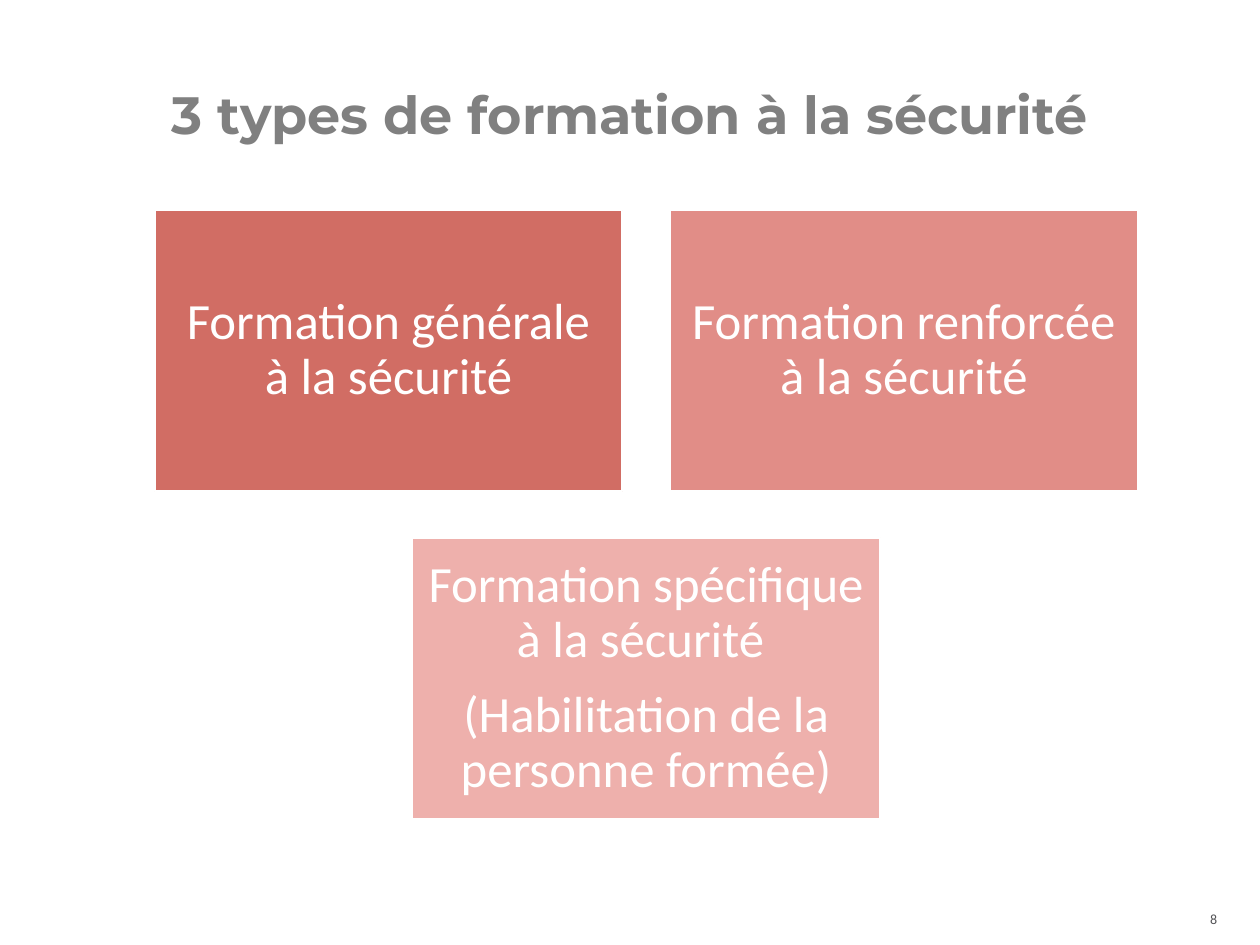
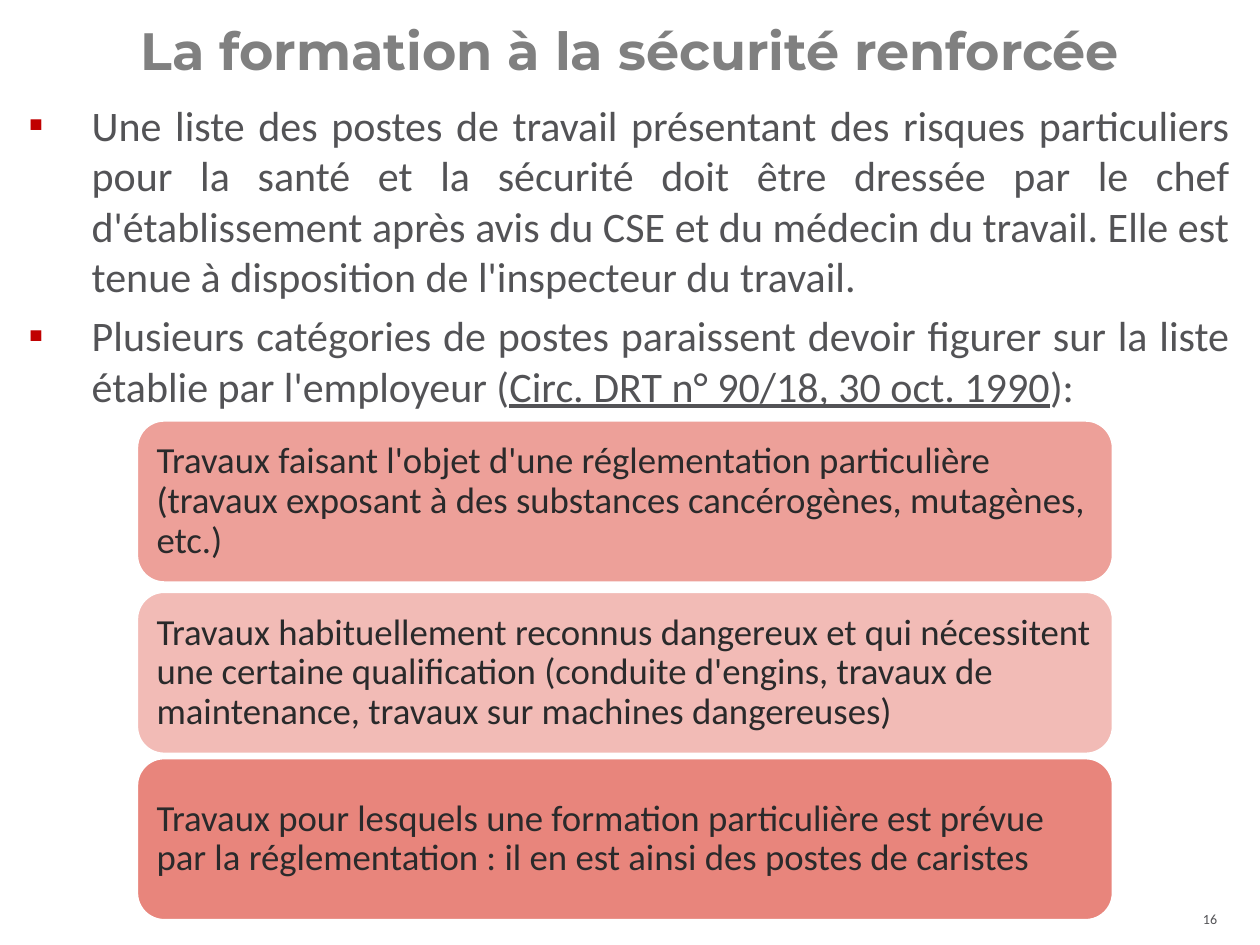
from lxml import etree
from pptx import Presentation
from pptx.dml.color import RGBColor
from pptx.enum import shapes, text
from pptx.oxml.ns import qn
from pptx.util import Inches, Pt

HUES = {
    "title": "808080", "body": "535356", "dark": "2A2A2B", "white": "FFFFFF",
    "bullet": "C00000", "strong": "D16D64", "mid": "E18D87", "pale": "EEB0AC",
    "coral": "E6786E",
}
ALIGN = text.PP_ALIGN


def rgb(name):
    return RGBColor.from_string(HUES[name])


def style(para, size, hue, align, face="Calibri", bold=False):
    para.alignment = align
    font = para.font
    font.name, font.size, font.bold = face, Pt(size), bold
    font.color.rgb = rgb(hue)


def inset(frame, size):
    frame.margin_left = frame.margin_right = Inches(size)
    frame.margin_top = frame.margin_bottom = Inches(size)


def label(slide, box, words, *look, **more):
    """One-line text box."""
    frame = slide.shapes.add_textbox(*map(Inches, box)).text_frame
    frame.word_wrap = True
    frame.text = words
    style(frame.paragraphs[0], *look, **more)
    return frame


def base(deck, title, top, number):
    """Blank slide with the shared title and page number."""
    slide = deck.slides.add_slide(deck.slide_layouts[6])
    label(slide, (0, top, 10, 0.61), title, 30, "title", ALIGN.CENTER,
          face="Montserrat", bold=True)
    foot = label(slide, (9.07, 7.19, 0.59, 0.2), number, 8, "body", ALIGN.RIGHT)
    foot.vertical_anchor = text.MSO_ANCHOR.MIDDLE
    inset(foot, 0)
    return slide


def card(slide, kind, box, lines, fill, size, hue, align, pad):
    """Filled shape with centred lines of text."""
    shape = slide.shapes.add_shape(kind, *map(Inches, box))
    shape.shadow.inherit = False
    shape.fill.solid()
    shape.fill.fore_color.rgb = rgb(fill)
    shape.line.color.rgb = rgb("white")
    shape.line.width = Pt(1)
    frame = shape.text_frame
    frame.word_wrap = True
    frame.vertical_anchor = text.MSO_ANCHOR.MIDDLE
    inset(frame, pad)
    frame.text = "\n".join(lines)
    for para in frame.paragraphs:
        style(para, size, hue, align)
        para.line_spacing = 0.9
    for para in frame.paragraphs[:-1]:
        para.space_after = Pt(11.5)
    return shape


def fade(shape, share):
    """Set the opacity of a solid fill, in percent."""
    tint = shape.fill._xPr.find(qn("a:solidFill"))[0]
    etree.SubElement(tint, qn("a:alpha"), val=str(share * 1000))


def types(slide, box):
    """Two cards side by side and a third centred below."""
    left, top, width, high = box
    wide, tall = 3.71, 2.23
    right, low = left + width - wide, top + high - tall
    cards = [
        (left, top, "strong", ["Formation générale à la sécurité"]),
        (right, top, "mid", ["Formation renforcée à la sécurité"]),
        ((left + right) / 2, low, "pale",
         ["Formation spécifique à la sécurité ",
          "(Habilitation de la personne formée)"]),
    ]
    for x, y, fill, lines in cards:
        card(slide, shapes.MSO_SHAPE.RECTANGLE, (x, y, wide, tall), lines,
             fill, 29, "white", ALIGN.CENTER, 0.12)


def mark(para):
    """Red square bullet with a hanging indent."""
    props = para._p.get_or_add_pPr()
    props.set("marL", str(Inches(0.5)))
    props.set("indent", str(-Inches(0.5)))
    tone = etree.SubElement(props, qn("a:buClr"))
    etree.SubElement(tone, qn("a:srgbClr"), val=HUES["bullet"])
    etree.SubElement(props, qn("a:buFont"), typeface="Calibri")
    etree.SubElement(props, qn("a:buChar"), char="▪")


def points(slide, box, items):
    """Justified bullets; each item is a list of (words, underlined)."""
    frame = slide.shapes.add_textbox(*map(Inches, box)).text_frame
    frame.word_wrap = True
    for i, item in enumerate(items):
        para = frame.add_paragraph() if i else frame.paragraphs[0]
        para.space_before = Pt(5 if i else 0)
        mark(para)
        style(para, 24, "body", ALIGN.JUSTIFY)
        for words, under in item:
            run = para.add_run()
            run.text = words
            if under:
                run.font.underline = True


def works(slide, box):
    """Stack of rounded cards in three strengths of one colour."""
    left, top, width, high = box
    tall = 1.28
    stack = [
        (0, 70, "Travaux faisant l'objet d'une réglementation particulière "
                "(travaux exposant à des substances cancérogènes, mutagènes, etc.)"),
        (1.36, 50, "Travaux habituellement reconnus dangereux et qui nécessitent "
                   "une certaine qualification (conduite d'engins, travaux de "
                   "maintenance, travaux sur machines dangereuses)"),
        (high - tall, 90, "Travaux pour lesquels une formation particulière est prévue "
                          "par la réglementation : il en est ainsi des postes de caristes"),
    ]
    for drop, share, words in stack:
        shape = card(slide, shapes.MSO_SHAPE.ROUNDED_RECTANGLE,
                     (left, top + drop, width, tall), [words],
                     "coral", 21, "dark", ALIGN.LEFT, 0.09)
        fade(shape, share)


def main():
    deck = Presentation()
    deck.slide_width, deck.slide_height = Inches(10), Inches(7.5)

    # Three types of training
    slide = base(deck, "3 types de formation à la sécurité", 0.6, "8")
    types(slide, (1.23, 1.67, 7.8, 4.83))

    # Reinforced training
    slide = base(deck, "La formation à la sécurité renforcée", 0.09, "16")
    points(slide, (0.13, 0.74, 9.73, 2.6), [
        [("Une liste des postes de travail présentant des risques particuliers "
          "pour la santé et la sécurité doit être dressée par le chef "
          "d'établissement après avis du CSE et du médecin du travail. Elle est "
          "tenue à disposition de l'inspecteur du travail.", False)],
        [("Plusieurs catégories de postes paraissent devoir figurer sur la liste "
          "établie par l'employeur (", False),
         ("Circ. DRT n° 90/18, 30 oct. 1990", True), ("):", False)],
    ])
    works(slide, (1.09, 3.34, 7.74, 3.96))

    deck.save("out.pptx")


if __name__ == "__main__":
    main()
